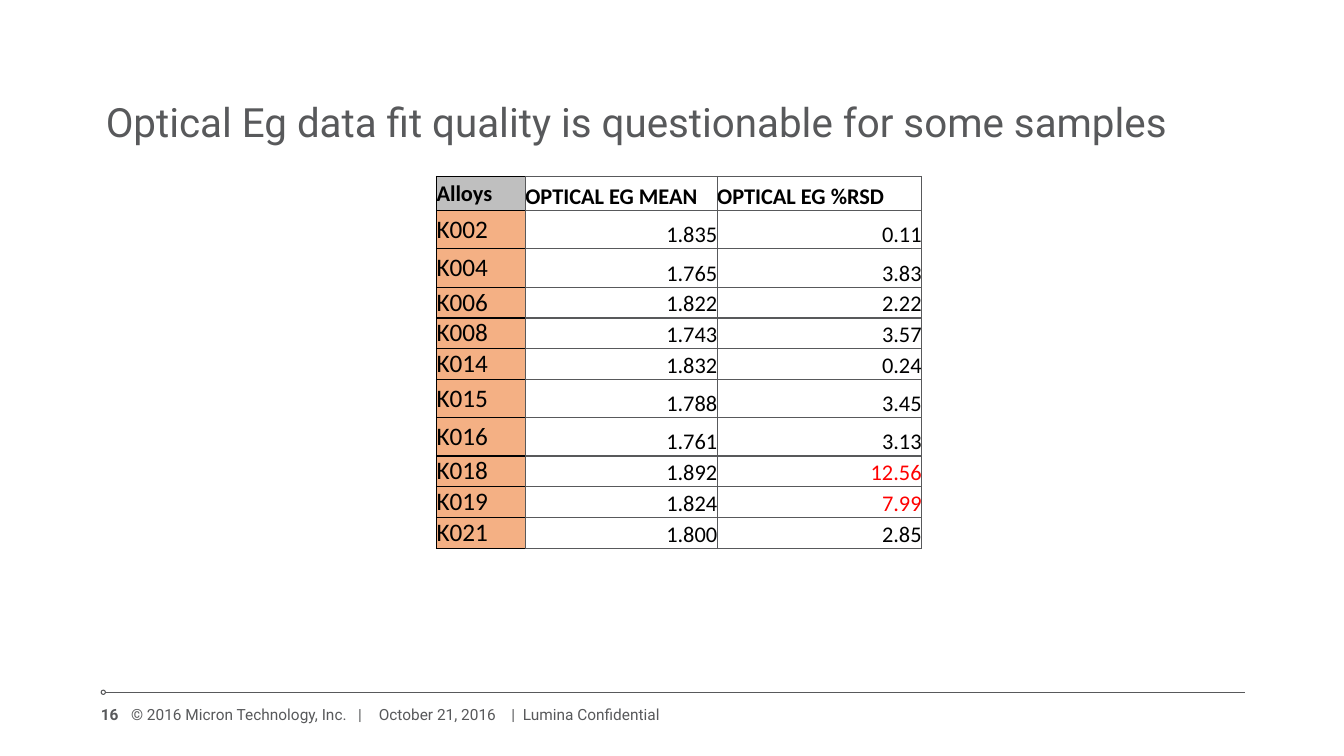
import pptx
import pptx.util
import pptx.dml.color
import pptx.enum.text
import pptx.enum.shapes
import pptx.oxml
import pptx.oxml.ns

Pt = pptx.util.Pt
Anchor = pptx.enum.text.MSO_ANCHOR
Align = pptx.enum.text.PP_ALIGN
GRAY, BLACK, RED = "58595B", "000000", "FF0000"


def color(code):
    return pptx.dml.color.RGBColor.from_string(code)


def write(para, text, font, size, code, bold=False):
    run = para.add_run()
    run.text = text
    run.font.name = font
    run.font.size = Pt(size)
    run.font.bold = bold
    run.font.color.rgb = color(code)


deck = pptx.Presentation()
deck.slide_width, deck.slide_height = Pt(960), Pt(540)
slide = deck.slides.add_slide(deck.slide_layouts[6])
shapes = slide.shapes

dot = shapes.add_shape(pptx.enum.shapes.MSO_SHAPE.OVAL, Pt(72.3), Pt(493), Pt(3), Pt(3))
dot.shadow.inherit = False
dot.fill.background()
rule = shapes.add_connector(
    pptx.enum.shapes.MSO_CONNECTOR.STRAIGHT, Pt(75.3), Pt(494.5), Pt(889), Pt(494.5))
rule.element.spPr.append(pptx.oxml.parse_xml(
    f'<a:effectLst {pptx.oxml.ns.nsdecls("a")}/>'))
for mark in (dot, rule):
    mark.line.color.rgb = color(GRAY)
    mark.line.width = Pt(0.75)

texts = [
    ("Optical Eg data fit quality is questionable for some samples",
     75.6, 34, 817, 73.4, 28.8, Anchor.BOTTOM, Align.LEFT, False, 3.6),
    ("16", 72, 501, 21.6, 18, 11, Anchor.MIDDLE, Align.LEFT, True, 0),
    ("© 2016 Micron Technology, Inc.   |",
     93.6, 501, 170, 18, 11, Anchor.MIDDLE, Align.LEFT, False, 0),
    ("October 21, 2016", 259.2, 501, 106.5, 18, 11, Anchor.MIDDLE, Align.CENTER, False, 0),
    ("|  Lumina Confidential", 365.3, 501, 112, 18, 11, Anchor.MIDDLE, Align.LEFT, False, 0),
]
for text, left, top, width, height, size, anchor, align, bold, foot in texts:
    frame = shapes.add_textbox(Pt(left), Pt(top), Pt(width), Pt(height)).text_frame
    frame.word_wrap = True
    frame.margin_left = frame.margin_top = frame.margin_right = 0
    frame.margin_bottom = Pt(foot)
    frame.vertical_anchor = anchor
    para = frame.paragraphs[0]
    para.alignment = align
    write(para, text, "Roboto", size, GRAY, bold)

rows = [
    ("Alloys", "OPTICAL EG MEAN", "OPTICAL EG %RSD"),
    ("K002", "1.835", "0.11"),
    ("K004", "1.765", "3.83"),
    ("K006", "1.822", "2.22"),
    ("K008", "1.743", "3.57"),
    ("K014", "1.832", "0.24"),
    ("K015", "1.788", "3.45"),
    ("K016", "1.761", "3.13"),
    ("K018", "1.892", "12.56"),
    ("K019", "1.824", "7.99"),
    ("K021", "1.800", "2.85"),
]
widths = [63.5, 137, 146]
heights = [24.5, 27.3, 27.3, 22, 22, 22, 27.3, 27.3, 22, 22, 22]
table = shapes.add_table(len(rows), len(widths), Pt(311.8), Pt(126),
                         Pt(sum(widths)), Pt(sum(heights))).table
table.first_row = table.horz_banding = False
for col, width in zip(table.columns, widths):
    col.width = Pt(width)
for row, height in zip(table.rows, heights):
    row.height = Pt(height)

for r, row in enumerate(rows):
    for c, text in enumerate(row):
        head, label = r == 0, c == 0
        cell = table.cell(r, c)
        cell.margin_left = cell.margin_top = cell.margin_right = cell.margin_bottom = 0
        cell.vertical_anchor = Anchor.MIDDLE if label else Anchor.BOTTOM
        if label:
            cell.fill.solid()
            cell.fill.fore_color.rgb = color("BFBFBF" if head else "F4B084")
        else:
            cell.fill.background()
        para = cell.text_frame.paragraphs[0]
        para.alignment = Align.LEFT if head or label else Align.RIGHT
        high = c == 2 and not head and float(text) > 5
        write(para, text, "Calibri", 18 if label and not head else 16,
              RED if high else BLACK, head)
        props = cell._tc.get_or_add_tcPr()
        for i, side in enumerate("LRTB"):
            edge = BLACK if label and side != "R" else GRAY
            props.insert(i, pptx.oxml.parse_xml(
                f'<a:ln{side} {pptx.oxml.ns.nsdecls("a")} w="12700"><a:solidFill>'
                f'<a:srgbClr val="{edge}"/></a:solidFill></a:ln{side}>'))

deck.save("out.pptx")
